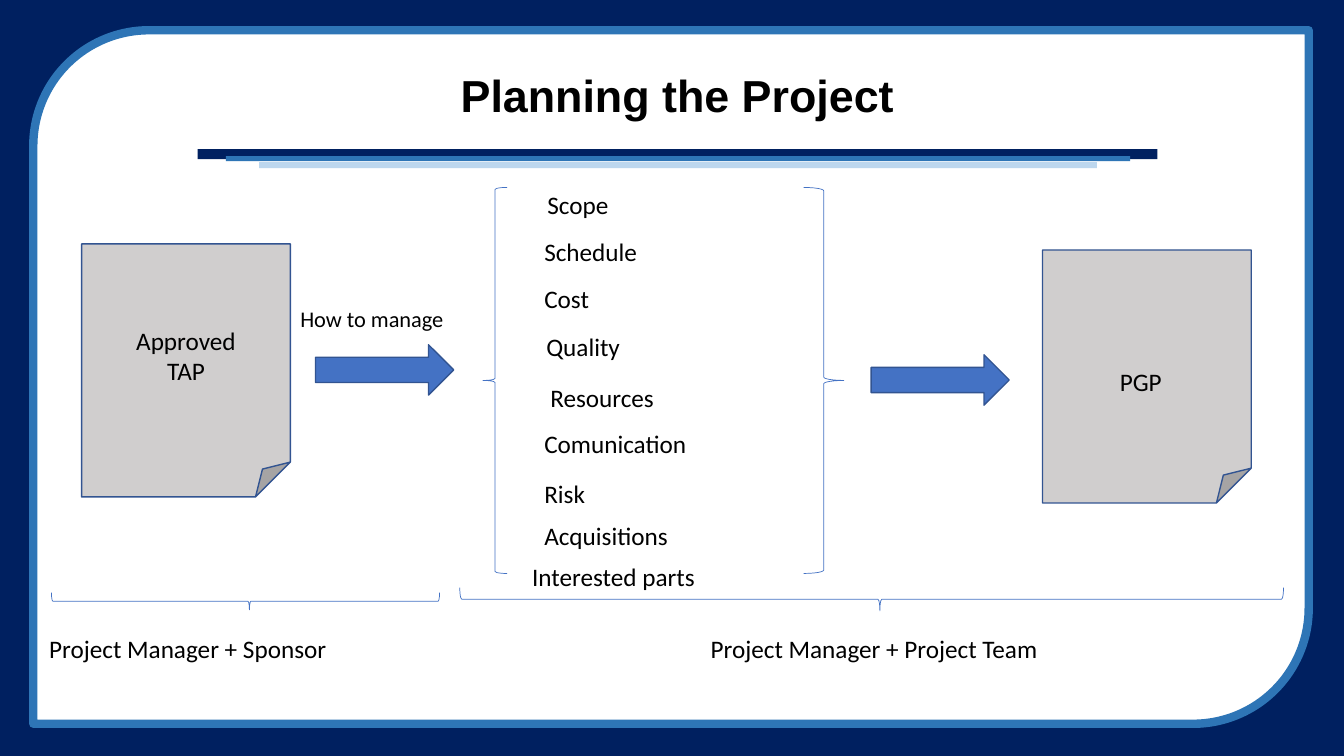
from pptx import Presentation
from pptx.dml.color import RGBColor
from pptx.enum.shapes import MSO_SHAPE
from pptx.enum.text import MSO_ANCHOR, PP_ALIGN
from pptx.util import Pt

PX = 9144
COLORS = {
    "navy": "002060",
    "frame": "2E75B6",
    "pale": "BDD7EE",
    "white": "FFFFFF",
    "black": "000000",
    "paper": "D0CECE",
    "outline": "325491",
    "accent": "4472C4",
}
TOPICS = [
    ("Scope", 533, 183),
    ("Schedule", 530, 230),
    ("Cost", 530, 276),
    ("Quality", 532, 324),
    ("Resources", 536, 374),
    ("Comunication", 530, 420),
    ("Risk", 530, 470),
    ("Acquisitions", 530, 511),
    ("Interested parts", 518, 552),
]
RULES = [
    (196, 148, 952, 10, "navy"),
    (224, 155, 897, 5, "frame"),
    (257, 161, 831, 6, "pale"),
]


def color(name):
    return RGBColor.from_string(COLORS[name])


def emu(*lengths):
    return [length * PX for length in lengths]


def apply(target, formats):
    for name, value in formats.items():
        setattr(target, name, value)


def add_figure(page, kind, area, fill=None, line=None, weight=1, rotation=0):
    figure = page.shapes.add_shape(kind, *emu(*area))
    figure.shadow.inherit = False
    figure.rotation = rotation
    if fill:
        figure.fill.solid()
        figure.fill.fore_color.rgb = color(fill)
    else:
        figure.fill.background()
    if line:
        figure.line.color.rgb = color(line)
        figure.line.width = Pt(weight)
    else:
        figure.line.fill.background()
    return figure


def add_text(page, lines, area, size=18, align=PP_ALIGN.LEFT, font="Calibri",
             bold=False, anchor=MSO_ANCHOR.TOP, spacing=1.0):
    box = page.shapes.add_textbox(*emu(*area))
    frame = box.text_frame
    apply(frame, {"word_wrap": True, "vertical_anchor": anchor})
    for index, line in enumerate(lines):
        para = frame.paragraphs[0] if index == 0 else frame.add_paragraph()
        apply(para, {"alignment": align, "line_spacing": spacing})
        span = para.add_run()
        span.text = line
        apply(span.font, {"name": font, "size": Pt(size), "bold": bold})
        span.font.color.rgb = color("black")


def add_document(page, left, top):
    add_figure(page, MSO_SHAPE.FOLDED_CORNER, (left, top, 207, 251), "paper", "outline")


def add_arrow(page, left, top):
    add_figure(page, MSO_SHAPE.RIGHT_ARROW, (left, top, 137, 50), "accent", "outline")


def add_brace(page, kind, area, rotation=0, tip=0.5):
    brace = add_figure(page, kind, area, line="accent", weight=0.5, rotation=rotation)
    brace.adjustments[0] = 0.083
    brace.adjustments[1] = tip


def add_frame(page):
    add_figure(page, MSO_SHAPE.RECTANGLE, (0, 0, 1333, 750), "navy")
    add_figure(page, MSO_SHAPE.ROUND_2_DIAG_RECTANGLE, (33, 30, 1265, 688),
               "white", "frame", 6, 180)
    for *area, fill in RULES:
        add_figure(page, MSO_SHAPE.RECTANGLE, area, fill)
    add_text(page, ["Planning the Project"], (196, 49, 952, 97), 32, PP_ALIGN.CENTER,
             "Arial", True, MSO_ANCHOR.MIDDLE, 0.9)


def add_flow(page):
    add_document(page, 81, 242)
    add_text(page, ["Approved", "TAP"], (101, 318, 167, 101), align=PP_ALIGN.CENTER)
    add_arrow(page, 313, 342)
    add_text(page, ["How to manage"], (288, 298, 225, 37), 16)
    for topic, left, top in TOPICS:
        add_text(page, [topic], (left, top, 207, 40))
    add_brace(page, MSO_SHAPE.LEFT_BRACE, (479, 186, 24, 383))
    add_brace(page, MSO_SHAPE.RIGHT_BRACE, (797, 186, 40, 383))
    add_arrow(page, 864, 352)
    add_document(page, 1034, 248)
    add_text(page, ["PGP"], (1048, 358, 167, 32), align=PP_ALIGN.CENTER)


def add_owners(page):
    add_brace(page, MSO_SHAPE.RIGHT_BRACE, (235, 404, 17, 385), 90, 0.49)
    add_text(page, ["Project Manager + Sponsor"], (39, 623, 493, 40))
    add_brace(page, MSO_SHAPE.RIGHT_BRACE, (853, 186, 23, 817), 90, 0.49)
    add_text(page, ["Project Manager + Project Team"], (695, 623, 552, 40))


def main():
    deck = Presentation()
    apply(deck, {"slide_width": 1333 * PX, "slide_height": 750 * PX})
    page = deck.slides.add_slide(deck.slide_layouts[6])
    add_frame(page)
    add_flow(page)
    add_owners(page)
    deck.save("out.pptx")


if __name__ == "__main__":
    main()
